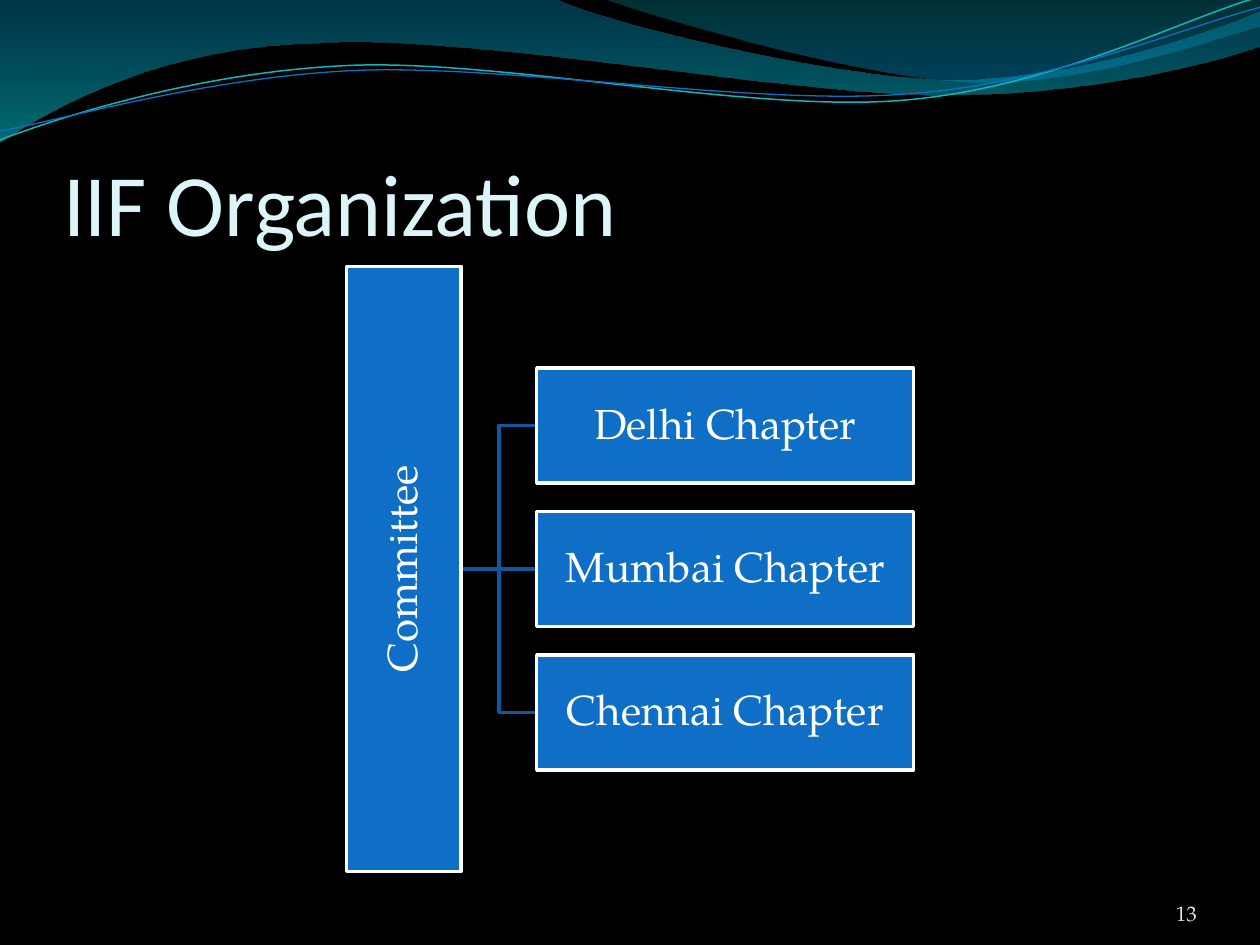
import pptx
import pptx.dml.color
import pptx.enum.shapes
import pptx.enum.text
import pptx.oxml.ns
import pptx.util
from lxml import etree

Cm, Pt = pptx.util.Cm, pptx.util.Pt
ALIGN = pptx.enum.text.PP_ALIGN
ANCHOR = pptx.enum.text.MSO_ANCHOR
CONNECTOR = pptx.enum.shapes.MSO_CONNECTOR
qn = pptx.oxml.ns.qn

BODY_FONT = "TeX Gyre Pagella"
BLUE, LINK_BLUE, WHITE = "0F6FC6", "0C599F", "FFFFFF"

# Outlines in cm: a one-point part is a line, a three-point part a Bezier curve.
LEFT_WAVE = [
    [(0, 0)],
    [(11.18, -0.03)],
    [(12.09, 0.43), (16.87, 1.6), (19.25, 1.6)],
    [(21.67, 1.6), (24.33, 0.66), (25.4, 0.23)],
    [(25.43, 0.91)],
    [(24.96, 1.12), (22.1, 1.93), (18.95, 1.91)],
    [(15.8, 1.91), (9.7, 0.71), (6.53, 0.86)],
    [(3.28, 0.91), (1.17, 2.11), (-0.03, 2.87)],
    [(0, 0)],
]
RIGHT_WAVE = [
    [(12.17, -0.03)],
    [(12.93, 0.28), (17.32, 1.57), (19.53, 1.65)],
    [(21.74, 1.75), (24.41, 0.81), (25.4, 0.53)],
    [(25.4, 0)],
    [(12.17, -0.03)],
]
TEAL_STRAND = [
    [(0, 2.82)],
    [(1.22, 2.36), (4.01, 1.45), (7.04, 1.32)],
    [(10.03, 1.19), (15.06, 2.26), (18.11, 2.03)],
    [(21.16, 1.8), (23.83, 0.38), (25.35, -0.05)],
]
BLUE_STRAND = [
    [(0, 2.64)],
    [(1.19, 2.44), (4.17, 1.55), (7.19, 1.42)],
    [(10.24, 1.3), (15.16, 2.13), (18.21, 1.9)],
    [(21.23, 1.7), (23.9, 0.53), (25.4, 0.15)],
]


def rgb(value):
    return pptx.dml.color.RGBColor.from_string(value)


def add_outline(slide, outline, close):
    """Build a freeform through all points, then bend each three-point part."""
    points = [(Cm(x), Cm(y)) for part in outline for x, y in part]
    builder = slide.shapes.build_freeform(*points[0])
    builder.add_line_segments(points[1:], close=close)
    shape = builder.convert_to_shape()
    shape.shadow.inherit = False
    route = next(shape._element.spPr.iter(qn("a:path")))
    segments = iter(route.findall(qn("a:lnTo")))
    for part in outline[1:]:
        first, *others = [next(segments) for _ in part]
        if others:
            first.tag = qn("a:cubicBezTo")
        for other in others:
            first.append(other[0])
            route.remove(other)
    return shape


def add_wave(slide, outline, stops):
    """Fill an outline downwards; stops are (position, colour, opacity in percent)."""
    wave = add_outline(slide, outline, close=True)
    wave.line.fill.background()
    wave.fill.gradient()
    wave.fill.gradient_angle = 270
    for stop, (position, color, _) in zip(wave.fill.gradient_stops, stops):
        stop.position = position
        stop.color.rgb = rgb(color)
    colors = wave._element.spPr.iter(qn("a:srgbClr"))
    for color, (_, _, opacity) in zip(colors, stops):
        etree.SubElement(color, qn("a:alpha")).set("val", str(opacity * 1000))


def add_strand(slide, outline, color, width):
    strand = add_outline(slide, outline, close=False)
    strand.fill.background()
    strand.line.color.rgb = rgb(color)
    strand.line.width = Pt(width)


def write(shape, text, size, font, color, align, anchor, insets=(0, 0, 0, 0)):
    frame = shape.text_frame
    frame.word_wrap = True
    frame.auto_size = pptx.enum.text.MSO_AUTO_SIZE.NONE
    frame.vertical_anchor = anchor
    (frame.margin_left, frame.margin_top,
     frame.margin_right, frame.margin_bottom) = map(Cm, insets)
    paragraph = frame.paragraphs[0]
    paragraph.alignment = align
    run = paragraph.add_run()
    run.text = text
    run.font.size = Pt(size)
    run.font.name = font
    run.font.color.rgb = rgb(color)


def add_unit(slide, text, left, top, width, height):
    unit = slide.shapes.add_shape(pptx.enum.shapes.MSO_SHAPE.RECTANGLE,
                                  Cm(left), Cm(top), Cm(width), Cm(height))
    unit.shadow.inherit = False
    unit.fill.solid()
    unit.fill.fore_color.rgb = rgb(BLUE)
    unit.line.color.rgb = rgb(WHITE)
    unit.line.width = Pt(2)
    write(unit, text, 24, BODY_FONT, WHITE, ALIGN.CENTER, ANCHOR.MIDDLE, (0.05,) * 4)
    unit.text_frame.paragraphs[0].line_spacing = 0.9
    return unit


def add_link(slide, parent, child, kind):
    """Join a parent's right side to a child's left side, behind both."""
    link = slide.shapes.add_connector(kind, 0, 0, 0, 0)
    link.begin_connect(parent, 3)
    link.end_connect(child, 1)
    link.line.color.rgb = rgb(LINK_BLUE)
    link.line.width = Pt(2)
    etree.SubElement(link._element.spPr, qn("a:effectLst"))
    parent._element.addprevious(link._element)


def add_organization(slide):
    committee = add_unit(slide, "Committee", 6.99, 5.37, 2.31, 12.2)
    committee.text_frame._txBody.bodyPr.set("vert", "vert270")
    chapters = [
        ("Delhi Chapter", CONNECTOR.ELBOW),
        ("Mumbai Chapter", CONNECTOR.STRAIGHT),
        ("Chennai Chapter", CONNECTOR.ELBOW),
    ]
    for row, (name, link_kind) in enumerate(chapters):
        chapter = add_unit(slide, name, 10.82, 7.42 + row * 2.89, 7.6, 2.32)
        add_link(slide, committee, chapter, link_kind)


def add_title(slide, text):
    title = slide.shapes.title
    title.left, title.top, title.width, title.height = map(Cm, (1.27, 1.96, 22.86, 3.17))
    write(title, text, 50, "Calibri", "DBF5F9", ALIGN.LEFT, ANCHOR.BOTTOM, (0, 0.13, 0, 0))


def add_page_number(slide, number):
    page = slide.shapes.add_textbox(Cm(22.02), Cm(17.65), Cm(2.11), Cm(1.02))
    write(page, number, 12, BODY_FONT, "D1EAEE", ALIGN.RIGHT, ANCHOR.BOTTOM)


def main():
    deck = pptx.Presentation()
    deck.slide_width, deck.slide_height = Cm(25.4), Cm(19.05)
    slide = deck.slides.add_slide(deck.slide_layouts[5])
    slide.background.fill.solid()
    slide.background.fill.fore_color.rgb = rgb("000000")

    add_wave(slide, LEFT_WAVE, [(0, "0074A1", 45), (1, "00C6CF", 55)])
    add_wave(slide, RIGHT_WAVE, [(0, "00A1A9", 30), (0.8, "008BBF", 45)])
    add_strand(slide, TEAL_STRAND, "0AB8BF", 0.85)
    add_strand(slide, BLUE_STRAND, BLUE, 0.75)
    add_title(slide, "IIF Organization")
    add_organization(slide)
    add_page_number(slide, "13")
    deck.save("out.pptx")


if __name__ == "__main__":
    main()
